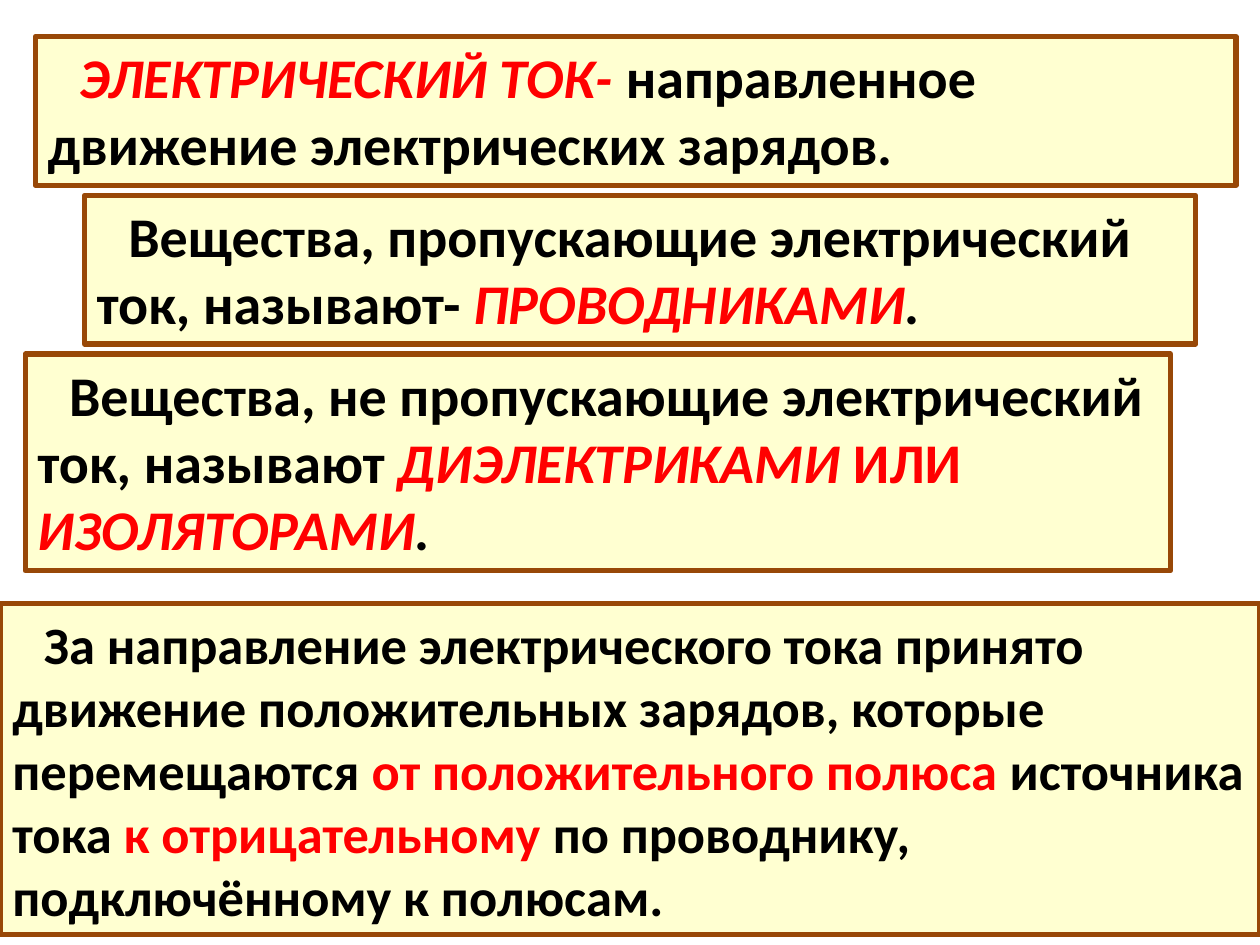
from pptx import Presentation
from pptx.dml.color import RGBColor
from pptx.enum.shapes import MSO_SHAPE
from pptx.enum.text import MSO_ANCHOR, MSO_AUTO_SIZE, PP_ALIGN
from pptx.util import Inches, Pt

RECT = MSO_SHAPE.RECTANGLE
TOP, MID = MSO_ANCHOR.TOP, MSO_ANCHOR.MIDDLE
GROW = MSO_AUTO_SIZE.SHAPE_TO_FIT_TEXT
LEFT = PP_ALIGN.LEFT
BLACK, RED, CREAM, BROWN = "000000", "FF0000", "FFFFD1", "984807"


def tint(code):
    return RGBColor.from_string(code)


def write(para, text, size=32, color=BLACK, slant=False):
    run = para.add_run()
    run.text = text
    font = run.font
    font.name = "Calibri"
    font.size = Pt(size)
    font.bold = True
    font.italic = slant
    font.color.rgb = tint(color)


plain = {}
red = {"color": RED}
term = {"color": RED, "slant": True}
tail = {"slant": True}

boxes = [
    ((0, 4.79, 10, 2.63), MID, 30, [
        ("За направление электрического тока принято движение "
         "положительных зарядов, которые перемещаются ", plain),
        ("от положительного полюса", red),
        (" источника тока ", plain),
        ("к отрицательному ", red),
        ("по проводнику, подключённому к полюсам.", plain),
    ]),
    ((0.28, 0.29, 9.53, 1.18), TOP, 32, [
        ("ЭЛЕКТРИЧЕСКИЙ ТОК- ", term),
        ("направленное движение электрических зарядов", plain),
        (".", tail),
    ]),
    ((0.67, 1.55, 8.82, 1.18), TOP, 32, [
        ("Вещества, пропускающие электрический ток, называют- ", plain),
        ("ПРОВОДНИКАМИ", term),
        (".", tail),
    ]),
    ((0.2, 2.81, 9.09, 1.72), TOP, 32, [
        ("Вещества, не пропускающие электрический ток, называют ", plain),
        ("ДИЭЛЕКТРИКАМИ", term),
        (" ИЛИ ", red),
        ("ИЗОЛЯТОРАМИ", term),
        (".", tail),
    ]),
]

deck = Presentation()
deck.slide_width = Inches(10)
deck.slide_height = Inches(7.5)
slide = deck.slides.add_slide(deck.slide_layouts[6])

for place, anchor, size, parts in boxes:
    box = slide.shapes.add_shape(RECT, *[Inches(n) for n in place])
    box.shadow.inherit = False
    box.fill.solid()
    box.fill.fore_color.rgb = tint(CREAM)
    box.line.color.rgb = tint(BROWN)
    box.line.width = Pt(3)
    frame = box.text_frame
    frame.word_wrap = True
    frame.auto_size = GROW
    frame.vertical_anchor = anchor
    para = frame.paragraphs[0]
    para.alignment = LEFT
    para._p.get_or_add_pPr().set("indent", str(Inches(0.25)))
    for text, style in parts:
        write(para, text, size=size, **style)

deck.save("out.pptx")
